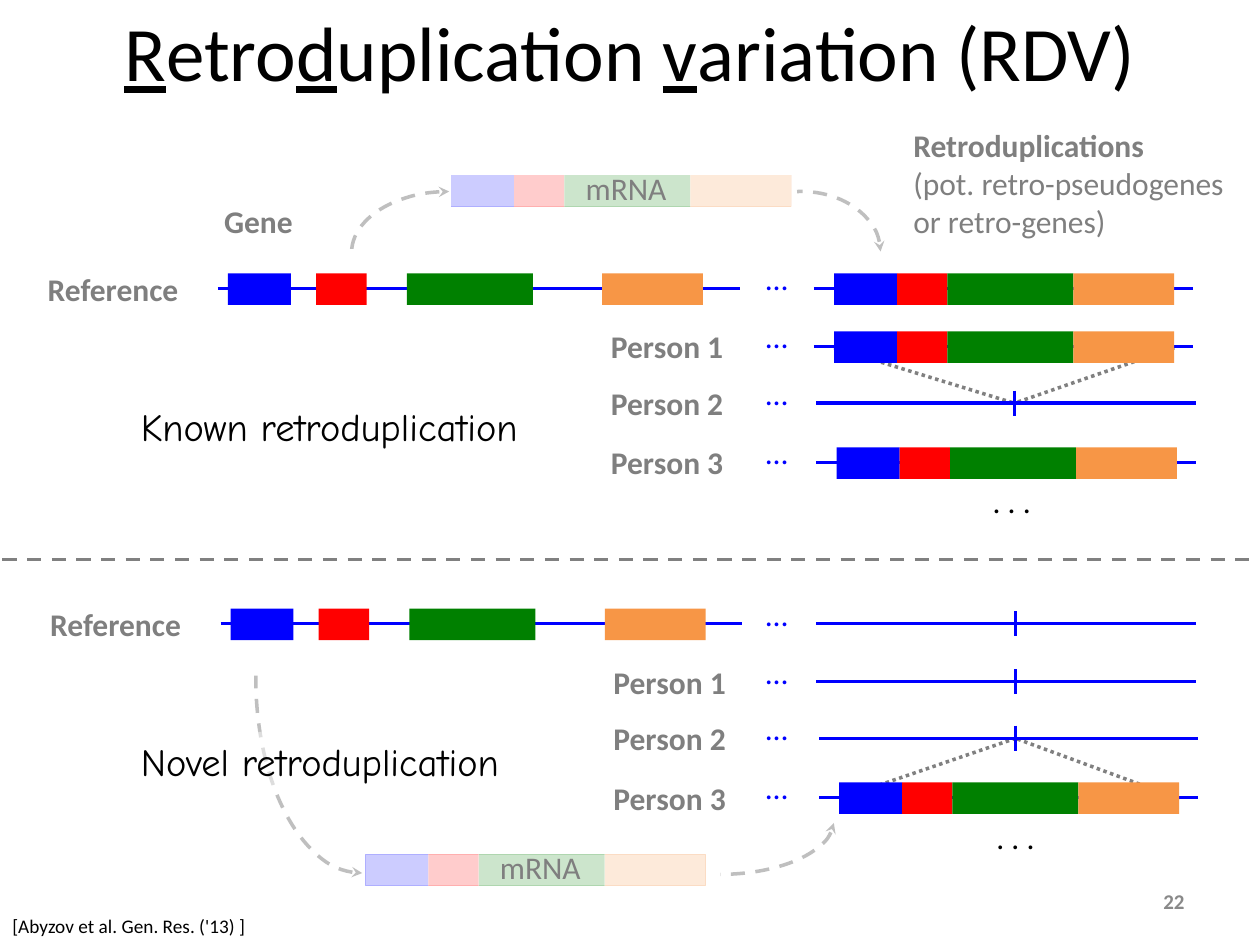
from itertools import accumulate

from lxml import etree
from pptx import Presentation, util as u
from pptx.dml.color import RGBColor
from pptx.enum import dml, shapes, text
from pptx.oxml.ns import qn

COLORS = {
    "blue": "0000FF", "red": "FF0000", "green": "008000", "orange": "F79646",
    "white": "FFFFFF", "black": "000000", "label": "7F7F7F",
    "guide": "808080", "arrow": "BFBFBF", "number": "898989",
}
EXONS = [("blue", 0.5), ("red", 0.4), ("green", 1.0), ("orange", 0.8)]
EXON_HEIGHT = 0.25
GENE_OFFSETS = [0, 0.7, 1.42, 2.97]
JOINED_OFFSETS = list(accumulate([width for _, width in EXONS[:-1]], initial=0))
JOINED_WIDTH = sum(width for _, width in EXONS)
DASH = dml.MSO_LINE.DASH
DOT = dml.MSO_LINE.ROUND_DOT


class Diagram:
    font = "Calibri"
    size = 18
    line_width = 2

    def __init__(self, slide):
        self.slide = slide

    def color(self, name):
        return RGBColor.from_string(COLORS[name])

    def stroke(self, line, color, dash=None):
        line.color.rgb = self.color(color)
        line.width = u.Pt(self.line_width)
        if dash is not None:
            line.dash_style = dash

    def line(self, x1, y1, x2, y2, color="blue", dash=None):
        connector = self.slide.shapes.add_connector(
            shapes.MSO_CONNECTOR.STRAIGHT,
            u.Inches(x1), u.Inches(y1), u.Inches(x2), u.Inches(y2))
        self.stroke(connector.line, color, dash)
        etree.SubElement(connector._element.spPr, qn("a:effectLst"))

    def shape(self, kind, box):
        shape = self.slide.shapes.add_shape(kind, *map(u.Inches, box))
        shape.shadow.inherit = False
        return shape

    def rectangle(self, box, color, opacity=100):
        shape = self.shape(shapes.MSO_SHAPE.RECTANGLE, box)
        shape.fill.solid()
        shape.fill.fore_color.rgb = self.color(color)
        shape.line.fill.background()
        if opacity < 100:
            value = shape._element.spPr.find(".//" + qn("a:srgbClr"))
            etree.SubElement(value, qn("a:alpha"), val=str(opacity * 1000))
        return shape

    def arc(self, box, start, end, flip=False):
        shape = self.shape(shapes.MSO_SHAPE.ARC, box)
        shape.adjustments[0] = start
        shape.adjustments[1] = end
        shape.fill.background()
        self.stroke(shape.line, "arrow", DASH)
        properties = shape._element.spPr
        etree.SubElement(properties.find(qn("a:ln")), qn("a:headEnd"), type="stealth")
        if flip:
            properties.find(qn("a:xfrm")).set("flipV", "1")

    def fill_text(self, shape, paragraphs, color="label", size=None, font=None,
                  align=text.PP_ALIGN.LEFT, anchor=text.MSO_ANCHOR.TOP,
                  wrap=False, grow=True):
        frame = shape.text_frame
        frame.word_wrap = wrap
        frame.vertical_anchor = anchor
        frame.auto_size = (text.MSO_AUTO_SIZE.SHAPE_TO_FIT_TEXT if grow
                           else text.MSO_AUTO_SIZE.NONE)
        for index, runs in enumerate(paragraphs):
            paragraph = frame.paragraphs[0] if index == 0 else frame.add_paragraph()
            paragraph.alignment = align
            for words, mark in runs:
                run = paragraph.add_run()
                run.text = words
                run.font.name = font or self.font
                run.font.size = u.Pt(size or self.size)
                run.font.color.rgb = self.color(color)
                run.font.bold = mark == "bold"
                run.font.underline = mark == "underline"

    def text(self, box, paragraphs, **style):
        self.fill_text(self.slide.shapes.add_textbox(*map(u.Inches, box)),
                       paragraphs, **style)

    def label(self, box, words, mark="", **style):
        self.text(box, [[(words, mark)]], **style)

    def exons(self, x, top, offsets):
        for (color, width), offset in zip(EXONS, offsets):
            self.rectangle((x + offset, top, width, EXON_HEIGHT), color)

    def mrna(self, x, top, label_x):
        self.exons(x, top, JOINED_OFFSETS)
        self.rectangle((x, top, JOINED_WIDTH, EXON_HEIGHT), "white", 80)
        self.label((label_x, top - 0.1, 0.86, 0.41), "mRNA")

    def gene(self, x, y):
        self.line(x, y, x + 4.14, y)
        self.exons(x + 0.08, y - 0.12, GENE_OFFSETS)
        self.label((x - 1.45, y - 0.2, 1.27, 0.4), "Reference", "bold")

    def locus(self, x, y, tick, copied):
        self.line(x, y, x + 3.01, y)
        if copied:
            self.exons(x + 0.16, y - 0.12, JOINED_OFFSETS)
        else:
            self.line(tick, y - 0.1, tick, y + 0.1)
        self.label((5.98, y - 0.28, 0.38, 0.4), "…", color="blue")

    def section(self, gene_x, rows, tick, copies, more):
        self.gene(gene_x, rows[0][1])
        for index, ((x, y), copied) in enumerate(zip(rows, copies)):
            self.locus(x, y, tick, copied)
            if index:
                self.label((gene_x + 3.02, y - 0.2, 1.11, 0.4),
                           f"Person {index}", "bold")
        self.label((*more, 0.51, 0.4), ". . .", color="black")


def main():
    presentation = Presentation()
    presentation.slide_width = u.Inches(10)
    presentation.slide_height = u.Inches(7.5)
    slide = presentation.slides.add_slide(presentation.slide_layouts[6])
    diagram = Diagram(slide)

    diagram.arc((2.03, 3.83, 1.69, 3.1), 54.01, 108.66)
    diagram.mrna(2.9, 6.78, 3.87)
    for x1, y1, x2, y2 in [(6.66, 6.34, 8.06, 5.86), (9.36, 6.34, 8.06, 5.86),
                           (6.62, 2.76, 8.05, 3.2), (9.32, 2.76, 8.05, 3.2)]:
        diagram.line(x1, y1, x2, y2, "guide", DOT)

    diagram.text((0.5, -0.22, 9, 1.25), [[
        ("R", "underline"), ("etro", ""), ("d", "underline"),
        ("uplication ", ""), ("v", "underline"), ("ariation (RDV)", "")]],
        color="black", size=44, align=text.PP_ALIGN.CENTER,
        anchor=text.MSO_ANCHOR.MIDDLE, wrap=True, grow=False)

    diagram.section(1.73, [(6.46, 2.29), (6.46, 2.75), (6.48, 3.2), (6.48, 3.67)],
                    8.05, [True, True, False, True], (7.78, 3.78))
    diagram.section(1.75, [(6.48, 4.95), (6.48, 5.41), (6.5, 5.86), (6.5, 6.33)],
                    8.06, [False, False, False, True], (7.81, 6.44))
    diagram.line(0.02, 4.44, 9.97, 4.44, "guide", DASH)

    heading = {"color": "black", "size": 22, "font": "Comic Neue"}
    diagram.label((1.02, 3.15, 3.56, 0.47), "Known retroduplication", **heading)
    novel = diagram.rectangle((1.02, 5.81, 3.43, 0.47), "white", 48)
    diagram.fill_text(novel, [[("Novel retroduplication", "")]], **heading)

    diagram.label((1.68, 1.55, 0.76, 0.41), "Gene", "bold")
    diagram.text((7.15, 0.95, 2.85, 1.01), [
        [("Retroduplications", "bold")],
        [("(pot. retro-pseudogenes or retro-genes)", "")]], wrap=True)
    diagram.label((7.17, 6.95, 2.33, 0.4), "22", "bold", color="number", size=12,
                  align=text.PP_ALIGN.RIGHT, anchor=text.MSO_ANCHOR.MIDDLE,
                  wrap=True, grow=False)
    diagram.label((0, 7.21, 2.07, 0.29), "[Abyzov et al. Gen. Res. ('13) ]",
                  color="black", size=11)

    diagram.mrna(3.58, 1.39, 4.55)
    diagram.arc((2.79, 1.52, 1.55, 0.97), 54.01, 108.66, flip=True)
    diagram.arc((5.73, 1.52, 1.26, 0.97), 0.46, 56.37, flip=True)
    diagram.arc((4.81, 6.07, 1.81, 0.87), 1.03, 53.98)

    presentation.save("out.pptx")


if __name__ == "__main__":
    main()
